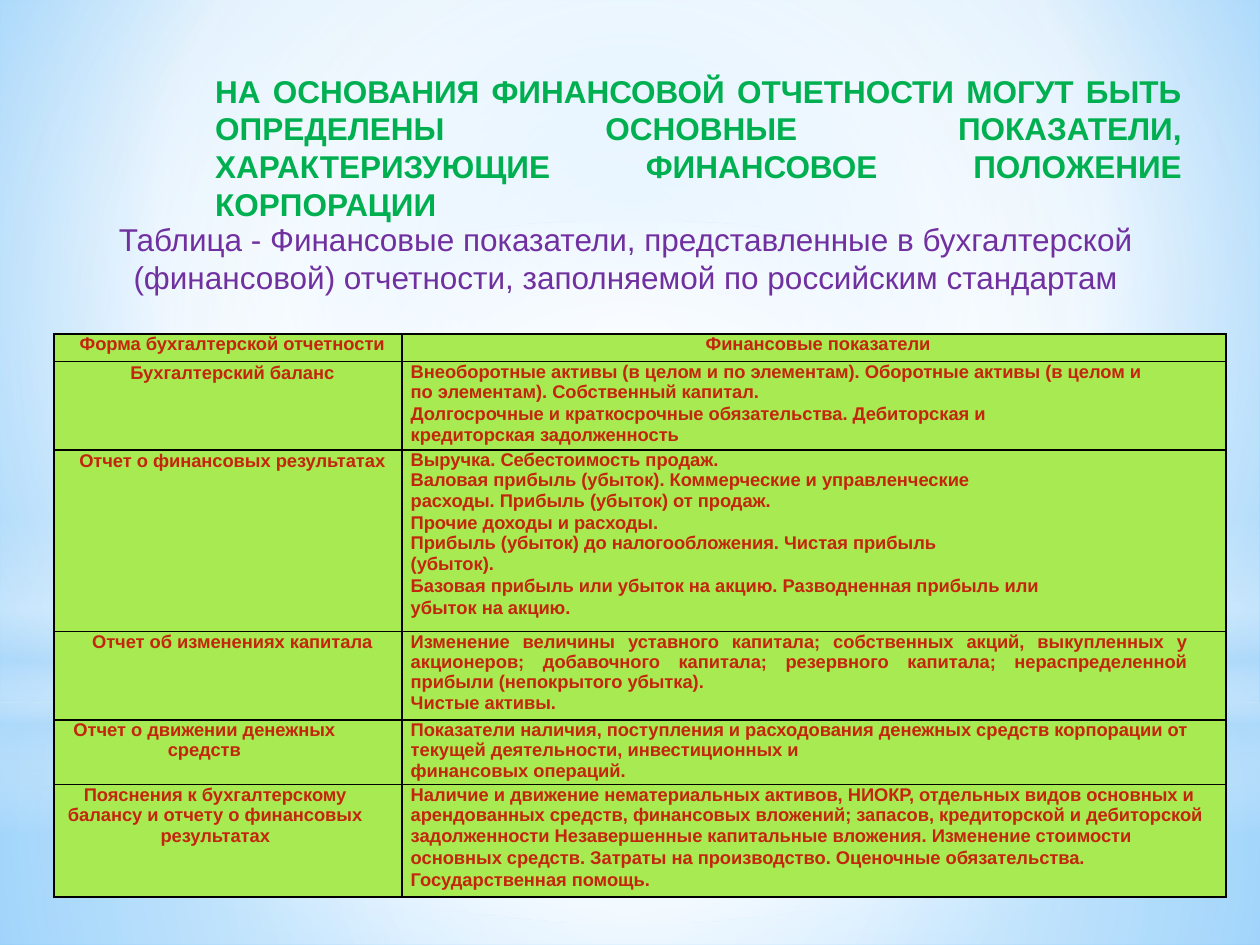
from dataclasses import dataclass
from typing import Optional

from lxml import etree
from pptx import Presentation
from pptx.dml.color import RGBColor
from pptx.enum.shapes import MSO_SHAPE
from pptx.enum.text import PP_ALIGN
from pptx.oxml.ns import qn
from pptx.util import Cm, Pt

RECTANGLE, OVAL = MSO_SHAPE.RECTANGLE, MSO_SHAPE.OVAL
LEFT, CENTER, JUSTIFY = PP_ALIGN.LEFT, PP_ALIGN.CENTER, PP_ALIGN.JUSTIFY


@dataclass(frozen=True)
class Theme:
    font: str = "Arial"
    title: str = "00B050"
    caption: str = "7030A0"
    cell_text: str = "C3260C"
    cell_fill: str = "A7EA52"
    border: str = "000000"
    white: str = "FFFFFF"
    glow: str = "B4DCFA"
    heading_size: float = 18
    cell_size: float = 10.5


THEME = Theme()


@dataclass(frozen=True)
class Gradient:
    stops: tuple  # (position %, colour, opacity %)
    focus: Optional[tuple] = (50, 50, 50, 50)  # None means top to bottom


@dataclass(frozen=True)
class Layer:
    kind: int
    top: float
    height: float
    gradient: Gradient


@dataclass(frozen=True)
class Line:
    text: str
    spacing: Optional[float] = None  # points
    right: float = 0  # right indent, cm
    align: int = LEFT


@dataclass(frozen=True)
class Row:
    height: float
    form: Line
    indicators: tuple


def centered(text: str, spacing: Optional[float] = None, right: float = 0) -> Line:
    return Line(text, spacing, right, CENTER)


WIDTH, HEIGHT = 25.4, 19.05
INDENT = 0.18
TABLE_LEFT, TABLE_TOP = 1.09, 6.73
COLUMN_WIDTHS = (7.01, 16.61)

BACKGROUND = Gradient(((0, "9ED5FF", 100), (60, THEME.white, 100), (100, "5BB9FF", 100)),
                      (20, 10, 20, 60))
LAYERS = (
    Layer(RECTANGLE, 14.17, 4.88, Gradient(
        ((0, THEME.white, 91), (37, THEME.white, 76), (100, THEME.glow, 79)))),
    Layer(RECTANGLE, 0, 14.17, Gradient(
        ((0, THEME.white, 89), (48, THEME.white, 62), (100, THEME.glow, 79)))),
    Layer(RECTANGLE, 10.46, 6.35, Gradient(
        ((0, THEME.white, 0), (29, THEME.white, 30), (45, THEME.glow, 40),
         (55, THEME.white, 26), (65, THEME.glow, 60), (100, THEME.white, 0)), None)),
    Layer(OVAL, 4.45, 14.17, Gradient(((0, THEME.white, 100), (56, THEME.white, 0)))),
)

ROWS = (
    Row(0.56, centered("Форма бухгалтерской отчетности", 11.7),
        (centered("Финансовые показатели", 11.7),)),
    Row(1.78, centered("Бухгалтерский баланс", 12.3), (
        Line("Внеоборотные активы (в целом и по элементам). Оборотные активы "
             "(в целом и по элементам). Собственный капитал.", right=1.45),
        Line("Долгосрочные и краткосрочные обязательства. Дебиторская и", 12.4),
        Line("кредиторская задолженность", 12))),
    Row(3.66, centered("Отчет о финансовых результатах", 12.3), (
        Line("Выручка. Себестоимость продаж."),
        Line("Валовая прибыль (убыток). Коммерческие и управленческие расходы. "
             "Прибыль (убыток) от продаж.", right=4.4),
        Line("Прочие доходы и расходы.", 12.6),
        Line("Прибыль (убыток) до налогообложения. Чистая прибыль (убыток).", right=4.8),
        Line("Базовая прибыль или убыток на акцию. Разводненная прибыль или "
             "убыток на акцию.", 12.7, 3.2))),
    Row(1.78, centered("Отчет об изменениях капитала", 12.2), (
        Line("Изменение величины уставного капитала; собственных акций, выкупленных у "
             "акционеров; добавочного капитала; резервного капитала; нераспределенной "
             "прибыли (непокрытого убытка).", right=0.76, align=JUSTIFY),
        Line("Чистые активы.", 12, align=JUSTIFY))),
    Row(1.3, centered("Отчет о движении денежных средств", right=1.13), (
        Line("Показатели наличия, поступления и расходования денежных средств корпорации "
             "от текущей деятельности, инвестиционных и", right=0.6),
        Line("финансовых операций.", 11.9))),
    Row(2.26, centered("Пояснения к бухгалтерскому балансу и отчету о финансовых результатах",
                       right=0.69), (
        Line("Наличие и движение нематериальных активов, НИОКР, отдельных видов основных и "
             "арендованных средств, финансовых вложений; запасов, кредиторской и дебиторской "
             "задолженности Незавершенные капитальные вложения. Изменение стоимости", right=0.25),
        Line("основных средств. Затраты на производство. Оценочные обязательства. "
             "Государственная помощь.", 12.6, 1.3))),
)


def add_color(parent, color: str, opacity: float = 100) -> None:
    node = etree.SubElement(parent, qn("a:srgbClr"), val=color)
    if opacity < 100:
        etree.SubElement(node, qn("a:alpha"), val=str(opacity * 1000))


def apply_gradient(fill, element, gradient: Gradient) -> None:
    fill.gradient()
    node = next(element.iter(qn("a:gradFill")))
    for child in list(node):
        node.remove(child)
    stop_list = etree.SubElement(node, qn("a:gsLst"))
    for position, color, opacity in gradient.stops:
        stop = etree.SubElement(stop_list, qn("a:gs"), pos=str(position * 1000))
        add_color(stop, color, opacity)
    if gradient.focus is None:
        etree.SubElement(node, qn("a:lin"), ang="5400000", scaled="0")
    else:
        circle = etree.SubElement(node, qn("a:path"), attrib={"path": "circle"})
        sides = {side: str(value * 1000) for side, value in zip("ltrb", gradient.focus)}
        etree.SubElement(circle, qn("a:fillToRect"), attrib=sides)


def add_layer(slide, layer: Layer) -> None:
    shape = slide.shapes.add_shape(layer.kind, Cm(0), Cm(layer.top), Cm(WIDTH), Cm(layer.height))
    shape.shadow.inherit = False
    shape.line.fill.background()
    apply_gradient(shape.fill, shape.element, layer.gradient)


def write_text(paragraph, text: str, *, size: float, color: str, bold: bool = False,
               align: int = LEFT, spacing: Optional[float] = None) -> None:
    paragraph.alignment = align
    if spacing:
        paragraph.line_spacing = Pt(spacing)
    run = paragraph.add_run()
    run.text = text
    run.font.name = THEME.font
    run.font.size = Pt(size)
    run.font.bold = bold
    run.font.color.rgb = RGBColor.from_string(color)


def add_heading(slide, left: float, top: float, width: float, height: float,
                text: str, **text_format) -> None:
    box = slide.shapes.add_textbox(Cm(left), Cm(top), Cm(width), Cm(height))
    box.text_frame.word_wrap = True
    write_text(box.text_frame.paragraphs[0], text, size=THEME.heading_size, **text_format)


def fill_cell(cell, lines: tuple) -> None:
    cell.margin_left = cell.margin_right = cell.margin_top = cell.margin_bottom = 0
    frame = cell.text_frame
    for index, line in enumerate(lines):
        paragraph = frame.add_paragraph() if index else frame.paragraphs[0]
        write_text(paragraph, line.text, size=THEME.cell_size, color=THEME.cell_text,
                   bold=True, align=line.align, spacing=line.spacing)
        properties = paragraph._p.get_or_add_pPr()
        properties.set("marL", str(Cm(INDENT)))
        properties.set("marR", str(Cm(line.right)))
    # Borders come before the fill in the cell properties
    properties = cell._tc.get_or_add_tcPr()
    for side in ("a:lnL", "a:lnR", "a:lnT", "a:lnB"):
        border = etree.SubElement(properties, qn(side), w=str(Pt(1)))
        add_color(etree.SubElement(border, qn("a:solidFill")), THEME.border)
    cell.fill.solid()
    cell.fill.fore_color.rgb = RGBColor.from_string(THEME.cell_fill)


def add_indicator_table(slide) -> None:
    table = slide.shapes.add_table(
        len(ROWS), len(COLUMN_WIDTHS), Cm(TABLE_LEFT), Cm(TABLE_TOP),
        Cm(sum(COLUMN_WIDTHS)), Cm(sum(row.height for row in ROWS))).table
    table.first_row = table.horz_banding = False
    for column, width in zip(table.columns, COLUMN_WIDTHS):
        column.width = Cm(width)
    for index, row in enumerate(ROWS):
        table.rows[index].height = Cm(row.height)
        fill_cell(table.cell(index, 0), (row.form,))
        fill_cell(table.cell(index, 1), row.indicators)


def main() -> None:
    presentation = Presentation()
    presentation.slide_width, presentation.slide_height = Cm(WIDTH), Cm(HEIGHT)
    slide = presentation.slides.add_slide(presentation.slide_layouts[6])

    # Background and soft light layers
    apply_gradient(slide.background.fill, slide.element, BACKGROUND)
    for layer in LAYERS:
        add_layer(slide, layer)

    # Title and table caption
    add_heading(slide, 4.09, 1.32, 19.99, 3.33,
                "НА ОСНОВАНИЯ ФИНАНСОВОЙ ОТЧЕТНОСТИ МОГУТ БЫТЬ ОПРЕДЕЛЕНЫ ОСНОВНЫЕ "
                "ПОКАЗАТЕЛИ, ХАРАКТЕРИЗУЮЩИЕ ФИНАНСОВОЕ ПОЛОЖЕНИЕ КОРПОРАЦИИ",
                color=THEME.title, bold=True, align=JUSTIFY)
    add_heading(slide, 0.51, 4.32, 24.21, 1.8,
                "Таблица - Финансовые показатели, представленные в бухгалтерской "
                "(финансовой) отчетности, заполняемой по российским стандартам",
                color=THEME.caption, align=CENTER)

    add_indicator_table(slide)
    presentation.save("out.pptx")


if __name__ == "__main__":
    main()
